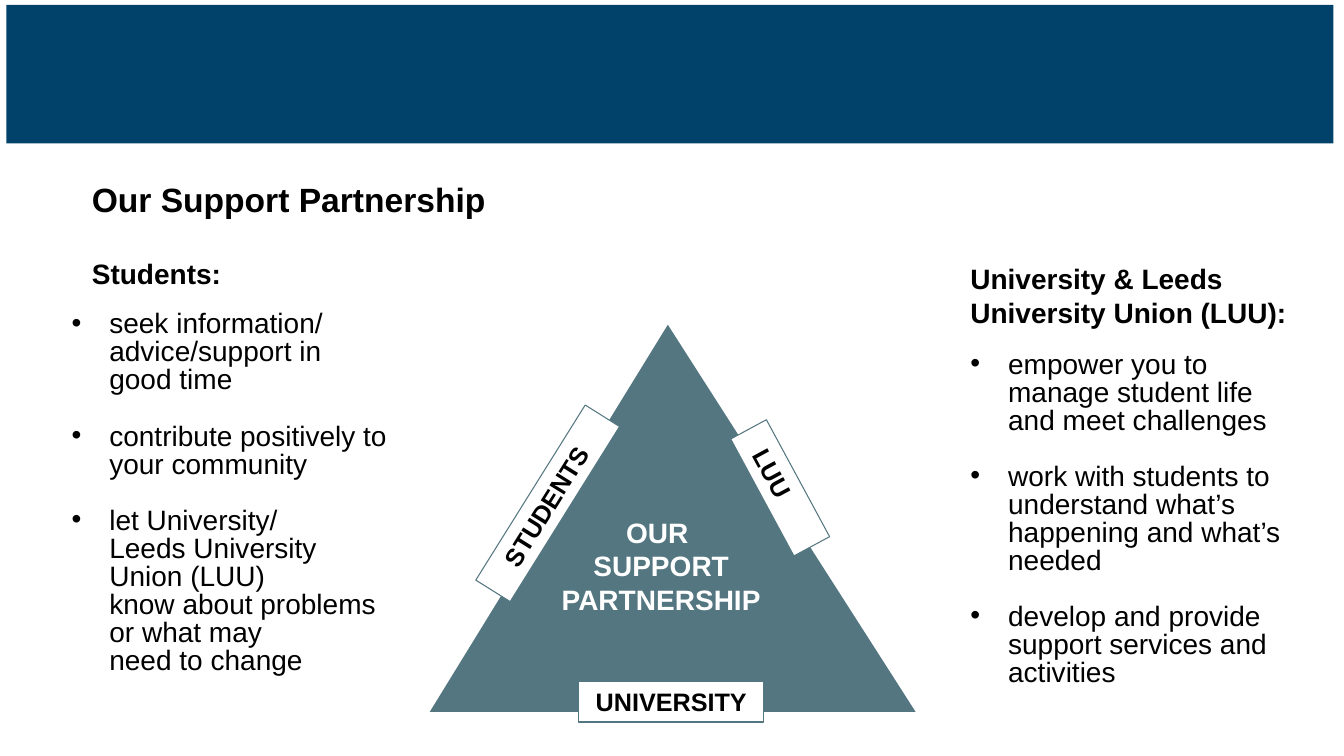
from lxml import etree
from pptx import Presentation
from pptx.dml.color import RGBColor
from pptx.enum import shapes, text
from pptx.oxml import ns
from pptx.util import Pt

COLOURS = {
    "banner": "004269",
    "triangle": "537680",
    "white": "FFFFFF",
    "black": "000000",
}
FONT = "Arial"
STUDENT_DUTIES = [
    "seek information/ advice/support in good time",
    "contribute positively to your community",
    "let University/\vLeeds University Union (LUU) \vknow about problems "
    "\vor what may \vneed to change",
]
UNIVERSITY_DUTIES = [
    "empower you to manage student life and meet challenges",
    "work with students to understand what’s \vhappening and what’s needed",
    "develop and provide support services and activities",
]


def colour(name):
    return RGBColor.from_string(COLOURS[name])


def add_bullet(para):
    properties = para._p.get_or_add_pPr()
    properties.set("marL", str(Pt(27)))
    properties.set("indent", str(-Pt(27)))
    bullet_font = etree.SubElement(properties, ns.qn("a:buFont"))
    bullet_font.set("typeface", FONT)
    bullet = etree.SubElement(properties, ns.qn("a:buChar"))
    bullet.set("char", "•")


def write(para, words, size=20, bold=True, ink="black", align="LEFT",
          leading=None, before=0, bullet=False):
    para.text = words
    para.alignment = getattr(text.PP_ALIGN, align)
    para.space_before = Pt(before)
    if leading:
        para.line_spacing = Pt(leading)
    if bullet:
        add_bullet(para)
    for span in para.runs:
        span.font.name = FONT
        span.font.size = Pt(size)
        span.font.bold = bold
        span.font.color.rgb = colour(ink)


def add_box(page, place, anchor="TOP"):
    box = page.shapes.add_textbox(*map(Pt, place))
    box.text_frame.word_wrap = True
    box.text_frame.vertical_anchor = getattr(text.MSO_ANCHOR, anchor)
    return box


def add_heading(page, place, words, **style):
    box = add_box(page, place)
    write(box.text_frame.paragraphs[0], words, **style)


def add_duties(page, place, duties, anchor="TOP"):
    frame = add_box(page, place, anchor).text_frame
    for index, duty in enumerate(duties):
        para = frame.add_paragraph() if index else frame.paragraphs[0]
        write(para, duty, bold=False, leading=20,
              before=20 if index else 0, bullet=True)


def add_block(page, kind, place, fill, line=None):
    block = page.shapes.add_shape(kind, *map(Pt, place))
    block.shadow.inherit = False
    block.fill.solid()
    block.fill.fore_color.rgb = colour(fill)
    if line:
        block.line.color.rgb = colour(line)
        block.line.width = Pt(0.75)
    else:
        block.line.fill.background()
    return block


def add_side_label(page, place, words, turn=0, align="CENTER", left=7.2):
    label = add_block(page, shapes.MSO_SHAPE.RECTANGLE, place,
                      "white", "triangle")
    label.rotation = turn
    frame = label.text_frame
    frame.vertical_anchor = text.MSO_ANCHOR.TOP
    frame.margin_left = Pt(left)
    write(frame.paragraphs[0], words, size=18, align=align)


def main():
    deck = Presentation()
    deck.slide_width, deck.slide_height = Pt(960), Pt(540)
    page = deck.slides.add_slide(deck.slide_layouts[6])

    add_block(page, shapes.MSO_SHAPE.RECTANGLE,
              (4.5, 3.5, 948, 99), "banner")
    add_duties(page, (686, 263, 248, 217), UNIVERSITY_DUTIES, "MIDDLE")

    triangle = add_block(page, shapes.MSO_SHAPE.ISOSCELES_TRIANGLE,
                         (307, 232, 347, 276.5), "triangle")
    triangle.adjustments[0] = 0.49
    add_heading(page, (370, 364.5, 204.5, 79),
                "OUR \vSUPPORT PARTNERSHIP", ink="white", align="CENTER")
    add_side_label(page, (509.75, 334, 95, 29), "LUU",
                   turn=61.6, align="LEFT", left=17.2)
    add_side_label(page, (413.5, 486.75, 132, 29), "UNIVERSITY")
    add_side_label(page, (317.5, 345, 147.5, 29), "STUDENTS ", turn=302)

    add_duties(page, (44, 219, 240, 291), STUDENT_DUTIES)
    add_heading(page, (686, 183.5, 253, 55.5),
                "University & Leeds University Union (LUU):")
    add_heading(page, (58.5, 179.5, 173.5, 31), "Students:", leading=24)
    add_heading(page, (58.5, 124.5, 635, 36),
                "Our Support Partnership", size=24)
    deck.save("out.pptx")


if __name__ == "__main__":
    main()
